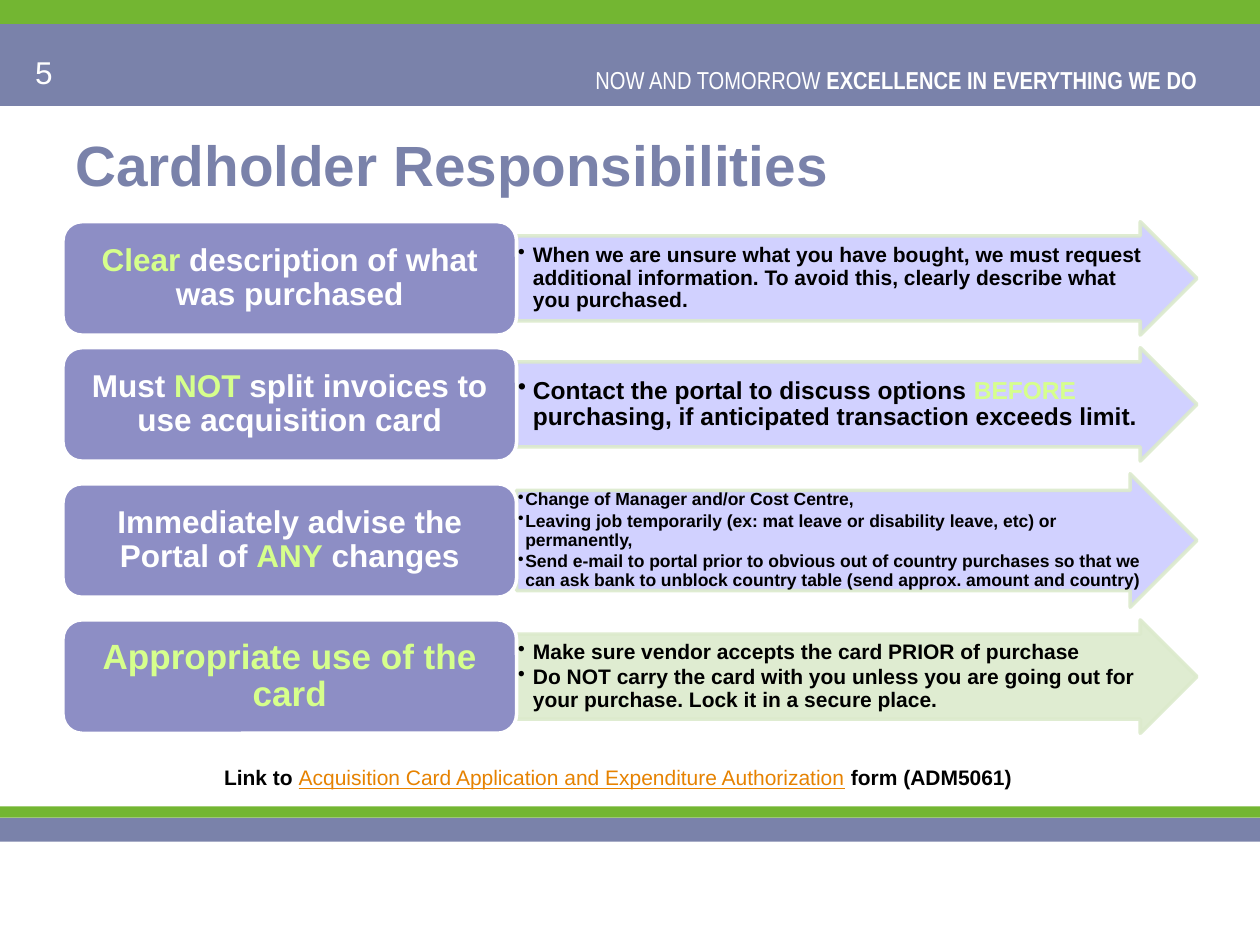
from lxml import etree
from pptx import Presentation
from pptx.dml.color import RGBColor
from pptx.enum import shapes, text
from pptx.oxml.ns import qn
from pptx.util import Inches, Pt

WHITE = RGBColor(0xFF, 0xFF, 0xFF)
BLACK = RGBColor(0, 0, 0)
SLATE = RGBColor(0x7A, 0x82, 0xAA)
GREEN = RGBColor(0x73, 0xB6, 0x32)
PURPLE = RGBColor(0x8D, 0x8E, 0xC5)
LILAC = RGBColor(0xCD, 0xCD, 0xFF)
PALE_GREEN = RGBColor(0xDC, 0xEA, 0xCC)
LIME = RGBColor(0xD6, 0xFF, 0x8C)
ORANGE = RGBColor(0xE6, 0x82, 0x00)

# Content: a paragraph is a list of runs, (text, changes to the base font)
HI = {"color": LIME}
BANDS = [(0.19, 0.65, SLATE), (0, 0.19, GREEN), (6.49, 0.19, SLATE), (6.4, 0.09, GREEN)]
TAGLINE = [("NOW AND TOMORROW ", {}), ("EXCELLENCE IN EVERYTHING WE DO", {"bold": True})]
FORM_LINK = [
    ("Link to ", {}),
    ("Acquisition Card Application and Expenditure Authorization",
     {"color": ORANGE, "bold": False, "underline": True}),
    (" form (ADM5061)", {}),
]
ROWS = [
    {"label": [("Clear ", HI), ("description of what was purchased", {})], "label_size": 18,
     "points": [[("When we are unsure what you have bought, we must request additional "
                  "information. To avoid this, clearly describe what you purchased.", {})]],
     "size": 12, "indent": 0.12, "height": 0.9, "fill": LILAC},
    {"label": [("Must ", {}), ("NOT", HI), (" split invoices to use acquisition card", {})],
     "label_size": 18,
     "points": [[("Contact the portal to discuss options ", {}), ("BEFORE", HI),
                 (" purchasing, if anticipated transaction exceeds limit.", {})]],
     "size": 14, "indent": 0.12, "height": 0.9, "fill": LILAC},
    {"label": [("Immediately advise the Portal of ", {}), ("ANY", HI), (" changes", {})],
     "label_size": 18,
     "points": [[("Change of Manager and/or Cost Centre,", {})],
                [("Leaving job temporarily (ex: mat leave or disability leave, etc) "
                  "or permanently,", {})],
                [("Send e-mail to portal prior to obvious out of country purchases so that we "
                  "can ask bank to unblock country table (send approx. amount and country)", {})]],
     "size": 10, "indent": 0.06, "height": 1.06, "fill": LILAC},
    {"label": [("Appropriate use of the card", HI)], "label_size": 20,
     "points": [[("Make sure vendor accepts the card PRIOR of purchase", {})],
                [("Do NOT carry the card with you unless you are going out for your purchase. "
                  "Lock it in a secure place.", {})]],
     "size": 12, "indent": 0.12, "height": 0.9, "fill": PALE_GREEN},
]
ROW_TOP, ROW_GAP = 1.76, 0.1
LABEL_LEFT, LABEL_W, LABEL_H = 0.5, 3.6, 0.9
ARROW_LEFT, ARROW_W = 4.1, 5.4


def add_runs(p, runs, size, color, font="Arial", bold=False):
    for words, changes in runs:
        r = p.add_run()
        r.text = words
        f = r.font
        f.name, f.size = font, Pt(size)
        f.bold = changes.get("bold", bold)
        f.underline = changes.get("underline")
        f.color.rgb = changes.get("color", color)


def set_frame(tf, margins, anchor=text.MSO_ANCHOR.MIDDLE):
    tf.word_wrap = True
    tf.vertical_anchor = anchor
    tf.margin_left = tf.margin_right = Inches(margins[0])
    tf.margin_top = tf.margin_bottom = Inches(margins[1])


def add_box(s, at, runs, size, color, align=text.PP_ALIGN.LEFT,
            anchor=text.MSO_ANCHOR.MIDDLE, **style):
    tf = s.shapes.add_textbox(*map(Inches, at)).text_frame
    set_frame(tf, (0.1, 0.05), anchor)
    p = tf.paragraphs[0]
    p.alignment = align
    add_runs(p, runs, size, color, **style)


def add_shape(s, kind, at, fill, line=None):
    sp = s.shapes.add_shape(kind, *map(Inches, at))
    sp.shadow.inherit = False
    sp.fill.solid()
    sp.fill.fore_color.rgb = fill
    if line is None:
        sp.line.fill.background()
    else:
        sp.line.color.rgb = line
        sp.line.width = Pt(2)
    return sp


def set_bullet(p, indent):
    pPr = p._p.get_or_add_pPr()
    pPr.set("marL", str(Inches(indent)))
    pPr.set("indent", str(-Inches(indent)))
    etree.SubElement(pPr, qn("a:buChar")).set("char", "•")


def add_arrow(s, top, row):
    at = (ARROW_LEFT, top, ARROW_W, row["height"])
    sp = add_shape(s, shapes.MSO_SHAPE.RIGHT_ARROW, at, row["fill"], PALE_GREEN)
    sp.adjustments[0], sp.adjustments[1] = 0.75, 0.5
    for clr in sp._element.spPr.iter(qn("a:srgbClr")):
        etree.SubElement(clr, qn("a:alpha")).set("val", "90000")
    tf = sp.text_frame
    set_frame(tf, (0.01, 0.01))
    for i, runs in enumerate(row["points"]):
        p = tf.paragraphs[0] if i == 0 else tf.add_paragraph()
        set_bullet(p, row["indent"])
        p.alignment = text.PP_ALIGN.LEFT
        p.line_spacing = 0.9
        p.space_after = Pt(0.15 * row["size"])
        add_runs(p, runs, row["size"], BLACK, bold=True)


def add_label(s, top, row):
    at = (LABEL_LEFT, top + (row["height"] - LABEL_H) / 2, LABEL_W, LABEL_H)
    sp = add_shape(s, shapes.MSO_SHAPE.ROUNDED_RECTANGLE, at, PURPLE, WHITE)
    set_frame(sp.text_frame, (0.07, 0.04))
    p = sp.text_frame.paragraphs[0]
    p.alignment = text.PP_ALIGN.CENTER
    p.line_spacing = 0.9
    add_runs(p, row["label"], row["label_size"], WHITE, bold=True)


def main():
    prs = Presentation()
    prs.slide_width, prs.slide_height = Inches(10), Inches(7.5)
    s = prs.slides.add_slide(prs.slide_layouts[6])

    # Header and footer bands
    for top, height, color in BANDS:
        add_shape(s, shapes.MSO_SHAPE.RECTANGLE, (0, top, 10, height), color)

    # Tagline, page number and title
    add_box(s, (4.55, 0.46, 5.05, 0.34), TAGLINE, 14, WHITE,
            text.PP_ALIGN.RIGHT, font="Arial Narrow")
    add_box(s, (0.18, 0.37, 2.33, 0.4), [("5", {})], 18, WHITE, anchor=text.MSO_ANCHOR.TOP)
    add_box(s, (0.5, 0.99, 9, 0.62), [("Cardholder Responsibilities", {})], 32.4, SLATE,
            bold=True)

    # Responsibilities, each a label with an arrow
    top = ROW_TOP
    for row in ROWS:
        add_arrow(s, top, row)
        add_label(s, top, row)
        top += row["height"] + ROW_GAP

    # Form reference
    add_box(s, (0.5, 5.97, 8.81, 0.4), FORM_LINK, 12, BLACK, text.PP_ALIGN.CENTER, bold=True)

    prs.save("out.pptx")


if __name__ == "__main__":
    main()
